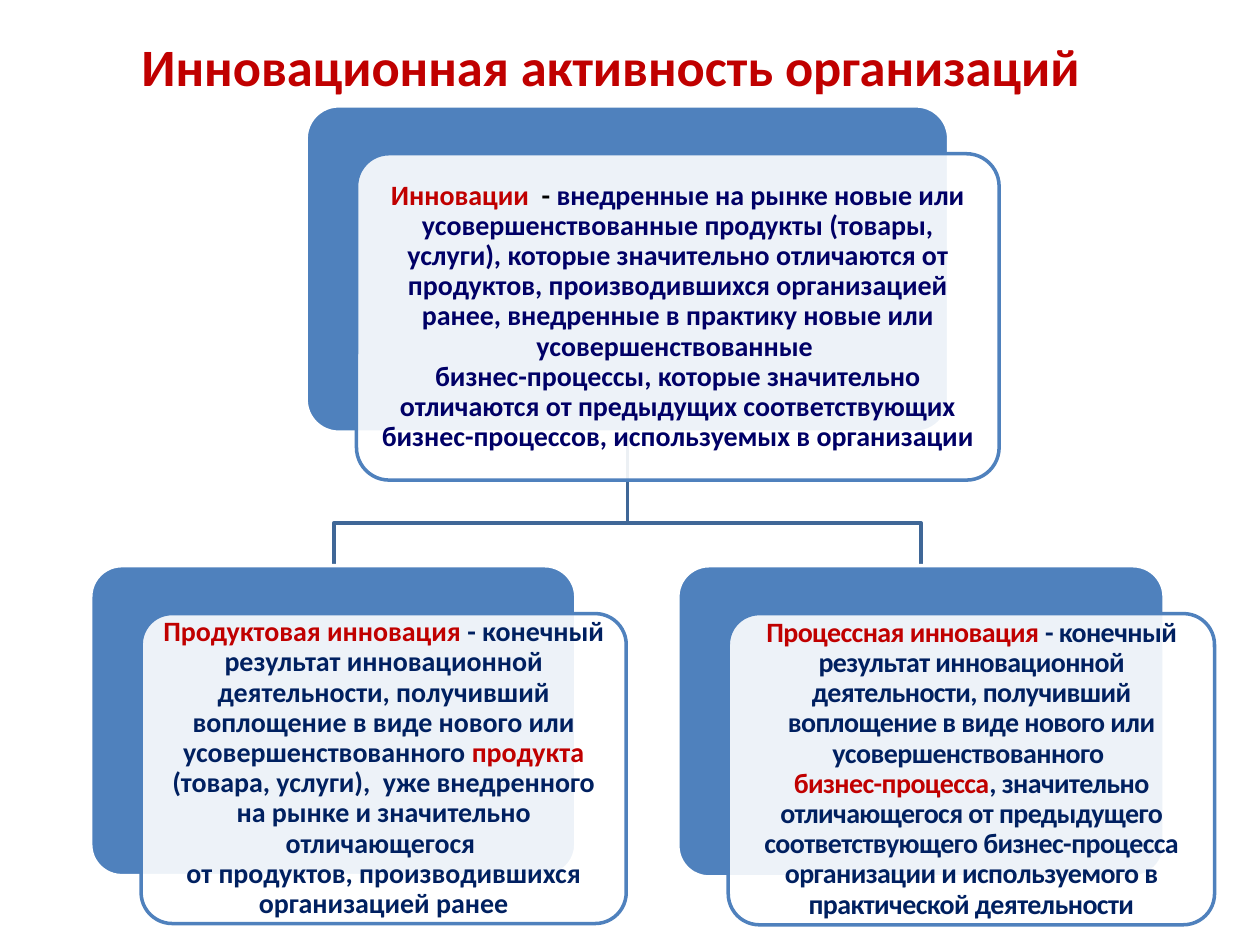
from copy import deepcopy

from lxml import etree
from pptx import Presentation
from pptx.dml.color import RGBColor
from pptx.enum.shapes import MSO_SHAPE
from pptx.enum.text import MSO_ANCHOR, PP_ALIGN
from pptx.oxml.ns import qn
from pptx.util import Inches, Pt

ROUNDED = MSO_SHAPE.ROUNDED_RECTANGLE
CENTER = PP_ALIGN.CENTER
TOP, MIDDLE = MSO_ANCHOR.TOP, MSO_ANCHOR.MIDDLE
RED, BLUE, NAVY, DARK = "C00000", "4F81BD", "000066", "002060"


def rgb(value):
    return RGBColor.from_string(value)


def write(p, text, size=16, color=DARK, spacing=None):
    """Add bold text to a paragraph; a newline becomes a line break."""
    for i, part in enumerate(text.split("\n")):
        if i:
            p.add_line_break()
            p._p[-1].append(deepcopy(r._r.rPr))
        if not part:
            continue
        r = p.add_run()
        r.text = part
        r.font.name, r.font.size, r.font.bold = "Calibri", Pt(size), True
        r.font.color.rgb = rgb(color)
        if spacing:
            r._r.rPr.set("spc", str(round(spacing * 100)))


prs = Presentation()
prs.slide_width, prs.slide_height = Inches(10), Inches(7.5)
s = prs.slides.add_slide(prs.slide_layouts[5])

# Title
title = s.shapes.title
title.left, title.top = Inches(0.2), Inches(0.21)
title.width, title.height = Inches(9.3), Inches(0.46)
tf = title.text_frame
tf.vertical_anchor = TOP
tf.margin_top = Inches(0.06)
p = tf.paragraphs[0]
p.alignment = CENTER
write(p, "Инновационная активность организаций", size=30, color=RED)

# Branches from the top card to the lower cards
trunk_x, start_y, bend_y, end_y = 4.98, 3.43, 4.15, 4.49
for x in (7.31, 2.65):
    fb = s.shapes.build_freeform(Inches(trunk_x), Inches(start_y))
    fb.add_line_segments([(Inches(trunk_x), Inches(bend_y)),
                          (Inches(x), Inches(bend_y)),
                          (Inches(x), Inches(end_y))], close=False)
    sp = fb.convert_to_shape()
    sp.shadow.inherit = False
    sp.fill.background()
    sp.line.color.rgb = rgb("3F6797")
    sp.line.width = Pt(2)

# Cards: left, top, width, height, letter spacing, coloured text parts
cards = [
    (2.43, 0.84, 5.1, 2.59, None, [
        ("Инновации  ", RED),
        ("- ", "000000"),
        ("внедренные на рынке новые или усовершенствованные продукты "
         "(товары, услуги), которые значительно отличаются от продуктов, "
         "производившихся организацией ранее, внедренные в практику новые "
         "или усовершенствованные \nбизнес-процессы, которые значительно "
         "отличаются от предыдущих соответствующих бизнес-процессов, "
         "используемых в организации", NAVY)]),
    (0.72, 4.49, 3.85, 2.46, None, [
        ("Продуктовая инновация ", RED),
        ("- конечный результат инновационной деятельности, получивший "
         "воплощение в виде нового или усовершенствованного ", DARK),
        ("продукта", RED),
        (" (товара, услуги),  уже внедренного на рынке и значительно "
         "отличающегося \nот продуктов, производившихся организацией ранее",
         DARK)]),
    (5.38, 4.49, 3.86, 2.47, -0.3, [
        ("Процессная инновация", RED),
        (" - конечный результат инновационной деятельности, получивший "
         "воплощение в виде нового или усовершенствованного \n", DARK),
        ("бизнес-процесса", RED),
        (", значительно отличающегося от предыдущего соответствующего "
         "бизнес-процесса организации и используемого в практической "
         "деятельности", DARK)]),
]
panel_dx, panel_dy = 0.4, 0.38

for x, y, w, h, spacing, parts in cards:
    # Blue backing, then the translucent panel offset over it
    for dx, dy, fill, line in ((0, 0, BLUE, "FFFFFF"),
                               (panel_dx, panel_dy, "FFFFFF", BLUE)):
        sp = s.shapes.add_shape(ROUNDED, Inches(x + dx), Inches(y + dy),
                                Inches(w), Inches(h))
        sp.adjustments[0] = 0.1
        sp.shadow.inherit = False
        sp.fill.solid()
        sp.fill.fore_color.rgb = rgb(fill)
        sp.line.color.rgb = rgb(line)
        sp.line.width = Pt(2)
    color = sp._element.spPr.find(qn("a:solidFill"))[0]
    etree.SubElement(color, qn("a:alpha")).set("val", "90000")

    # Definition inside the panel
    tf = sp.text_frame
    tf.word_wrap = True
    tf.vertical_anchor = MIDDLE
    tf.margin_left = tf.margin_right = Inches(0.07)
    tf.margin_top = tf.margin_bottom = Inches(0.07)
    p = tf.paragraphs[0]
    p.alignment = CENTER
    p.line_spacing = 0.9
    for text, color in parts:
        write(p, text, color=color, spacing=spacing)

prs.save("out.pptx")
